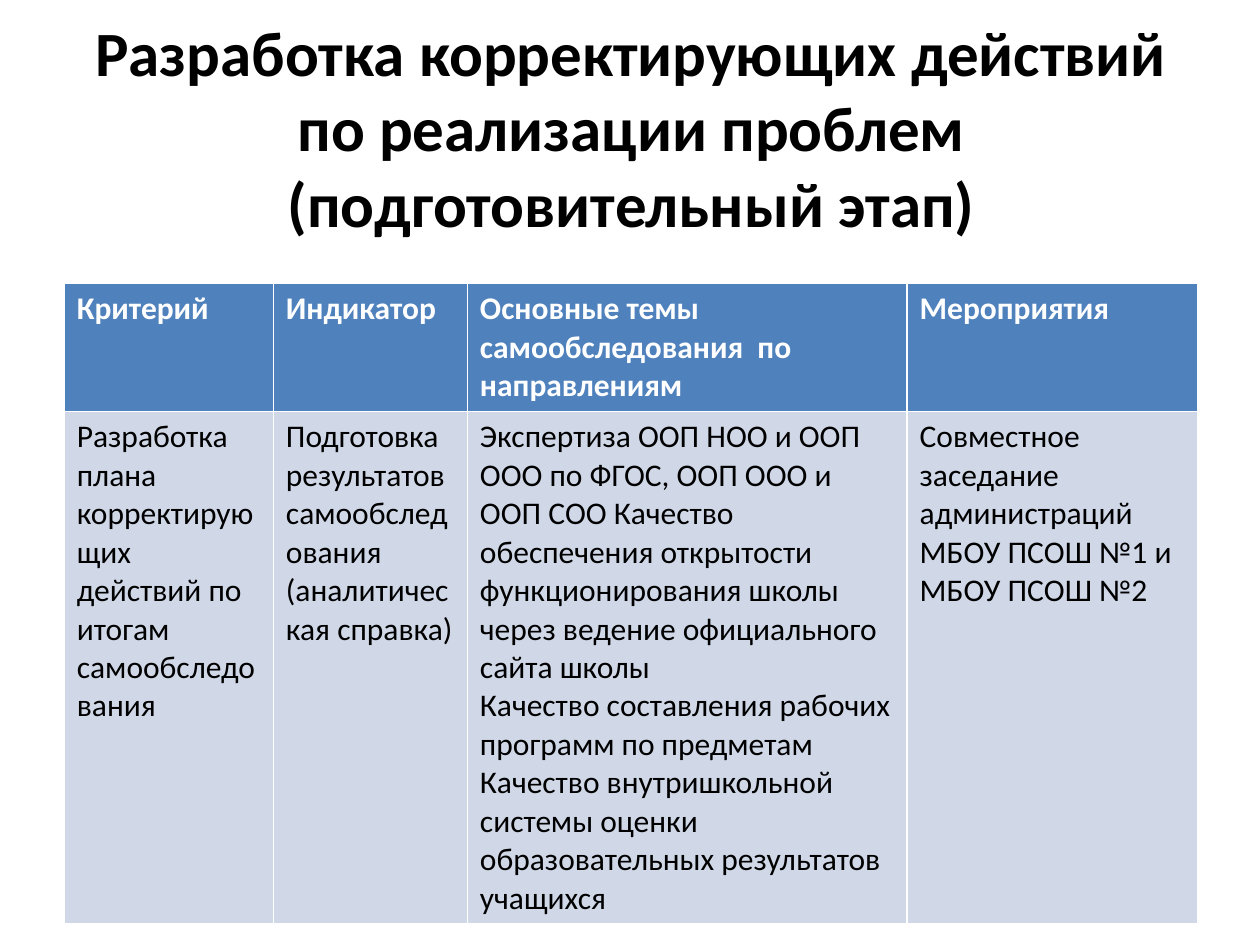
from dataclasses import dataclass

from pptx import Presentation
from pptx.dml.color import RGBColor
from pptx.enum.text import MSO_ANCHOR, MSO_AUTO_SIZE, PP_ALIGN
from pptx.util import Inches, Pt

FONT = "Calibri"
BLACK = RGBColor(0x00, 0x00, 0x00)
WHITE = RGBColor(0xFF, 0xFF, 0xFF)
HEADER_BLUE = RGBColor(0x4F, 0x81, 0xBD)
BODY_BLUE = RGBColor(0xD0, 0xD8, 0xE8)

TITLE = "Разработка корректирующих действий по реализации проблем (подготовительный этап)"
LEFT, WIDTH = 0.51, 9


@dataclass
class Column:
    width: float
    heading: str
    body: str


@dataclass
class RowStyle:
    height: float
    fill: RGBColor
    color: RGBColor
    bold: bool


COLUMNS = [
    Column(1.66, "Критерий",
           "Разработка плана корректирующих действий по итогам самообследования"),
    Column(1.54, "Индикатор",
           "Подготовка результатов самообследования (аналитическая справка)"),
    Column(3.49, "Основные темы  самообследования  по направлениям",
           "Экспертиза ООП НОО и ООП ООО по ФГОС, ООП ООО и ООП СОО "
           "Качество обеспечения открытости функционирования школы "
           "через ведение официального сайта школы\n"
           "Качество составления рабочих программ по предметам  "
           "Качество внутришкольной системы оценки образовательных результатов учащихся"),
    Column(2.31, "Мероприятия",
           "Совместное заседание администраций МБОУ ПСОШ №1 и МБОУ ПСОШ №2"),
]
ROW_STYLES = [
    RowStyle(1.0, HEADER_BLUE, WHITE, True),
    RowStyle(4.0, BODY_BLUE, BLACK, False),
]


def format_text(text_frame, size: float, color: RGBColor, bold: bool) -> None:
    for paragraph in text_frame.paragraphs:
        paragraph.font.name = FONT
        paragraph.font.size = Pt(size)
        paragraph.font.bold = bold
        paragraph.font.color.rgb = color


def set_title(slide) -> None:
    title = slide.shapes.title
    title.left, title.top = Inches(LEFT), Inches(0.38)
    title.width, title.height = Inches(WIDTH), Inches(1.25)
    text_frame = title.text_frame
    text_frame.text = TITLE
    text_frame.word_wrap = True
    text_frame.auto_size = MSO_AUTO_SIZE.NONE
    text_frame.vertical_anchor = MSO_ANCHOR.MIDDLE
    text_frame.paragraphs[0].alignment = PP_ALIGN.CENTER
    format_text(text_frame, 36, BLACK, True)


def add_plan_table(slide) -> None:
    # The default table style supplies the white rules between cells
    table = slide.shapes.add_table(
        len(ROW_STYLES), len(COLUMNS),
        Inches(LEFT), Inches(2.25), Inches(WIDTH), Inches(5)).table
    for row, style in zip(table.rows, ROW_STYLES):
        row.height = Inches(style.height)
    for column_index, column in enumerate(COLUMNS):
        table.columns[column_index].width = Inches(column.width)
        for row_index, text in enumerate((column.heading, column.body)):
            style = ROW_STYLES[row_index]
            cell = table.cell(row_index, column_index)
            cell.text = text
            cell.fill.solid()
            cell.fill.fore_color.rgb = style.fill
            format_text(cell.text_frame, 18, style.color, style.bold)


def main() -> None:
    presentation = Presentation()
    presentation.slide_width = Inches(10)
    presentation.slide_height = Inches(7.5)
    slide = presentation.slides.add_slide(presentation.slide_layouts[5])
    set_title(slide)
    add_plan_table(slide)
    presentation.save("out.pptx")


if __name__ == "__main__":
    main()
